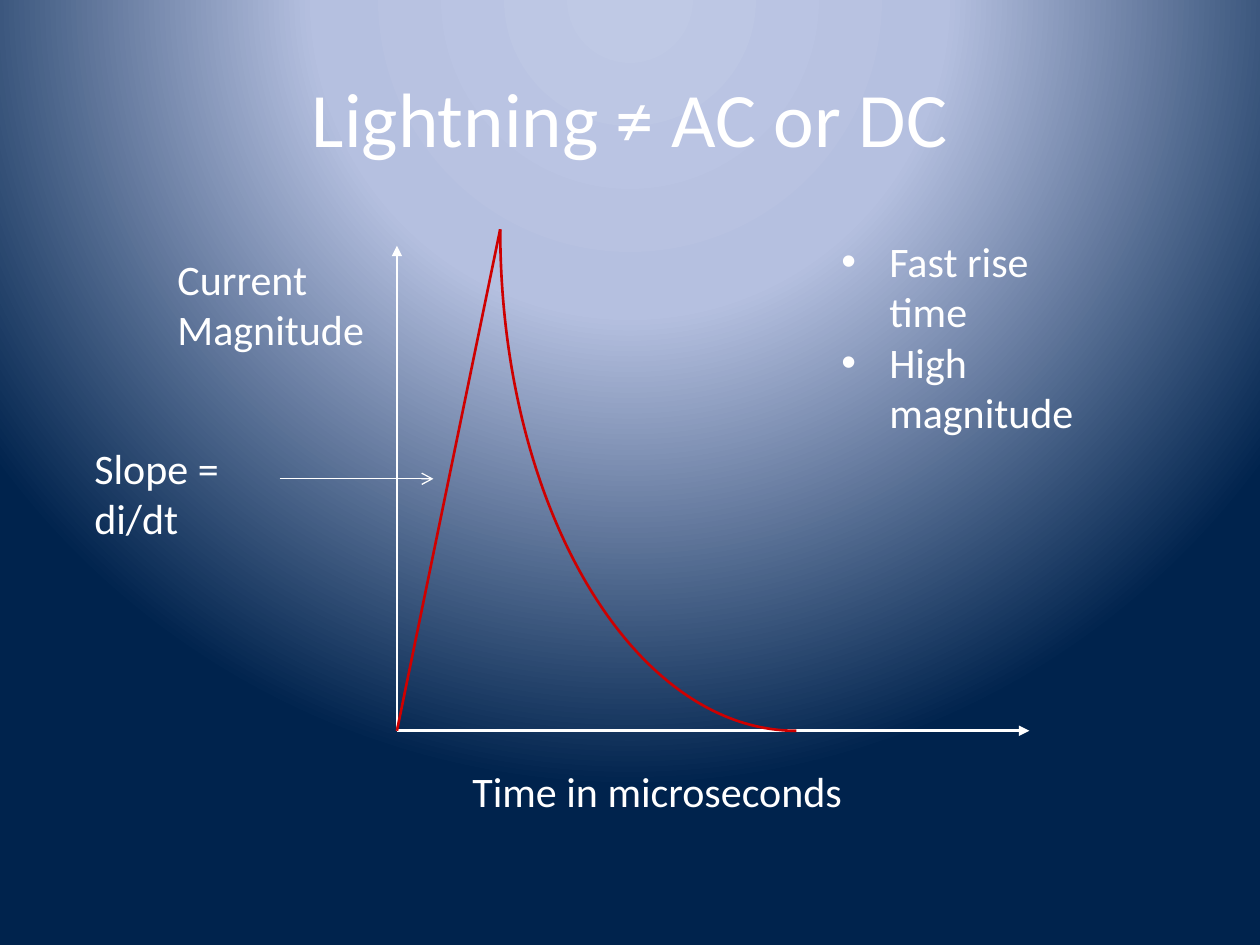
from lxml import etree
from pptx import Presentation
from pptx import util as u
from pptx.dml.color import RGBColor
from pptx.enum import shapes, text
from pptx.oxml import parse_xml
from pptx.oxml.ns import nsdecls, qn

WHITE = RGBColor(0xFF, 0xFF, 0xFF)
RED = RGBColor(0xCE, 0x00, 0x00)
GLOW = [(0, RGBColor(0xBF, 0xC9, 0xE5)), (40, RGBColor(0xB5, 0xC0, 0xE0)),
        (100, RGBColor(0x00, 0x23, 0x4D))]
FONT = "Calibri"
ORIGIN = (3.15, 5.8)
PEAK = (3.97, 1.82)
DECAY_END = (6.32, 5.8)
QUARTER_ARC = 0.5523


def paint_background(slide):
    slide.background.fill.gradient()
    old = next(slide.element.iter(qn("a:gradFill")))
    stops = "".join(
        f'<a:gs pos="{place * 1000}"><a:srgbClr val="{color}"/></a:gs>'
        for place, color in GLOW)
    old.getparent().replace(old, parse_xml(
        f'<a:gradFill rotWithShape="1" {nsdecls("a")}><a:gsLst>{stops}</a:gsLst>'
        '<a:path path="circle"><a:fillToRect l="50000" t="-80000" r="50000" b="180000"/>'
        '</a:path></a:gradFill>'))


def add_text(slide, place, lines, size=24, bulleted=False):
    box = slide.shapes.add_textbox(*map(u.Inches, place))
    frame = box.text_frame
    frame.word_wrap = True
    frame.text = "\n".join(lines)
    for para in frame.paragraphs:
        para.font.name = FONT
        para.font.size = u.Pt(size)
        para.font.color.rgb = WHITE
        if bulleted:
            add_bullet(para)
    return frame


def add_bullet(para):
    props = para._p.get_or_add_pPr()
    props.set("marL", str(u.Inches(0.38)))
    props.set("indent", str(u.Inches(-0.38)))
    props.insert(0, parse_xml(f'<a:buFont typeface="Arial" {nsdecls("a")}/>'))
    props.insert(1, parse_xml(f'<a:buChar char="•" {nsdecls("a")}/>'))


def add_line(slide, start, end, color=WHITE, width=1.5, arrow=None):
    line = slide.shapes.add_connector(
        shapes.MSO_CONNECTOR.STRAIGHT, *map(u.Inches, start + end))
    line.line.color.rgb = color
    line.line.width = u.Pt(width)
    if arrow:
        etree.SubElement(line.line._get_or_add_ln(), qn("a:tailEnd"), type=arrow)
    etree.SubElement(line._element.spPr, qn("a:effectLst"))


def add_decay_curve(slide):
    builder = slide.shapes.build_freeform(*map(u.Inches, DECAY_END))
    builder.add_line_segments([tuple(map(u.Inches, PEAK))], close=False)
    curve = builder.convert_to_shape()
    curve.shadow.inherit = False
    curve.fill.background()
    curve.line.color.rgb = RED
    curve.line.width = u.Pt(1.5)
    segment = next(curve._element.iter(qn("a:lnTo")))
    bend = etree.Element(qn("a:cubicBezTo"))
    width, height = curve.width, curve.height
    for x, y in [(width * (1 - QUARTER_ARC), height),
                 (0, height * QUARTER_ARC), (0, 0)]:
        etree.SubElement(bend, qn("a:pt"), x=str(round(x)), y=str(round(y)))
    segment.getparent().replace(segment, bend)


def main():
    deck = Presentation()
    deck.slide_width, deck.slide_height = u.Inches(10), u.Inches(7.5)
    slide = deck.slides.add_slide(deck.slide_layouts[6])
    paint_background(slide)

    title = add_text(slide, (0.5, 0.3, 9, 1.25), ["Lightning ≠ AC or DC"], size=44)
    title.vertical_anchor = text.MSO_ANCHOR.MIDDLE
    title.paragraphs[0].alignment = text.PP_ALIGN.CENTER

    add_line(slide, ORIGIN, (3.15, 1.95), arrow="triangle")
    add_line(slide, ORIGIN, (8.17, 5.8), arrow="triangle")
    add_line(slide, ORIGIN, PEAK, color=RED)
    add_decay_curve(slide)

    add_text(slide, (1.31, 1.96, 1.72, 0.91), ["Current", "Magnitude"])
    add_text(slide, (3.65, 6.03, 3.38, 0.5), ["Time in microseconds"])
    add_text(slide, (0.65, 3.46, 1.72, 0.91), ["Slope =", "di/dt"])
    add_text(slide, (6.58, 1.82, 2.31, 1.72),
             ["Fast rise time", "High magnitude"], bulleted=True)
    add_line(slide, (2.22, 3.8), (3.44, 3.8), width=0.75, arrow="arrow")

    deck.save("out.pptx")


if __name__ == "__main__":
    main()
